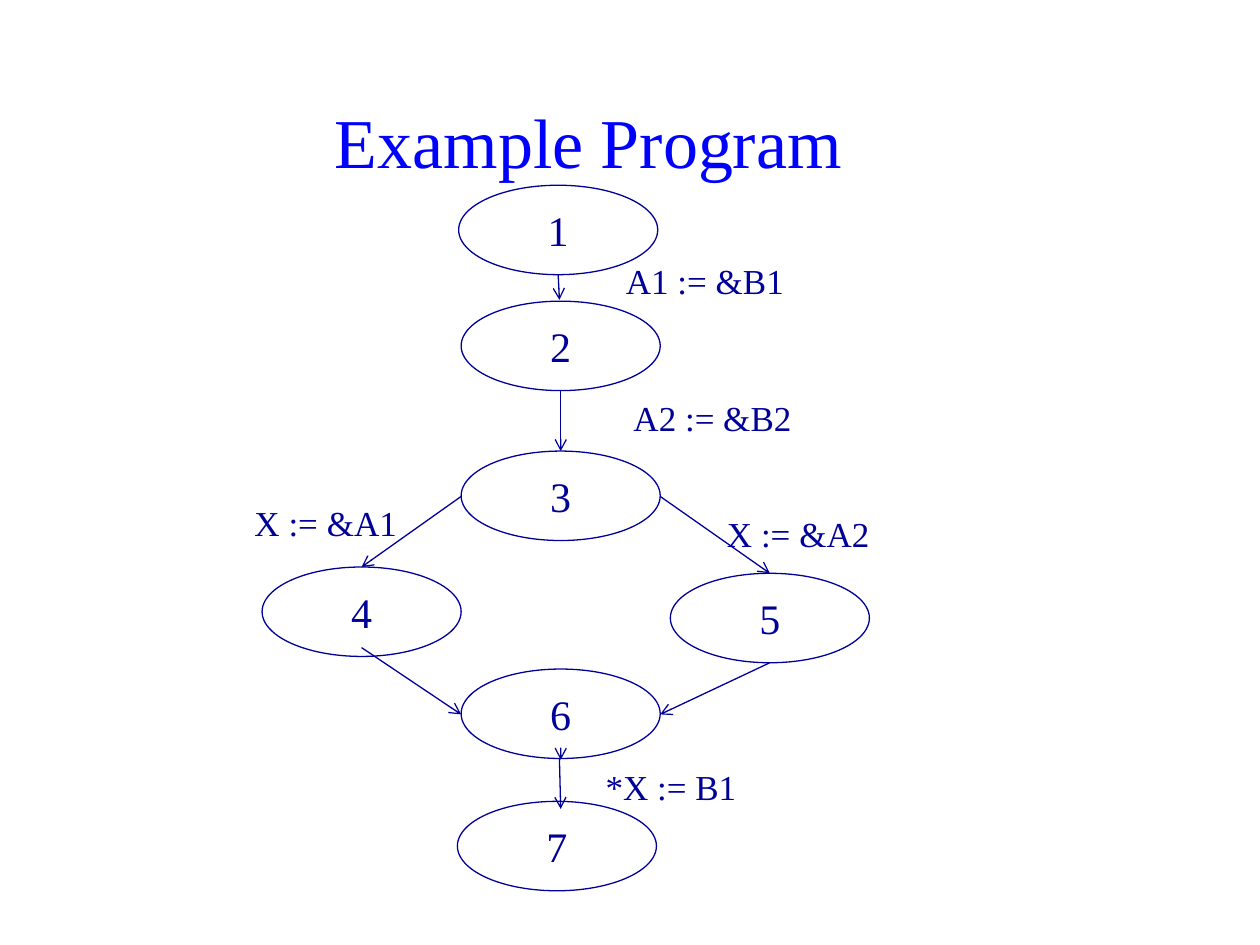
from typing import NamedTuple

from lxml.etree import SubElement
from pptx import Presentation
from pptx.dml.color import RGBColor
from pptx.enum.shapes import MSO_CONNECTOR, MSO_SHAPE
from pptx.enum.text import MSO_ANCHOR, MSO_AUTO_SIZE, PP_ALIGN
from pptx.oxml.ns import qn
from pptx.util import Inches, Pt

NAVY = RGBColor(0x00, 0x00, 0x99)
BLUE = RGBColor(0x00, 0x00, 0xFF)
FONT = "Times New Roman"
NODE_W, NODE_H = 1.58, 0.71
LABEL_W, LABEL_H = 2.09, 0.44


class Item(NamedTuple):
    text: str
    left: float
    top: float


class Arrow(NamedTuple):
    x1: float
    y1: float
    x2: float
    y2: float


NODES = [
    Item("1", 3.64, 1.47),
    Item("2", 3.66, 2.39),
    Item("3", 3.66, 3.58),
    Item("4", 2.08, 4.5),
    Item("5", 5.32, 4.55),
    Item("6", 3.66, 5.31),
    Item("7", 3.63, 6.36),
]
LABELS = [
    Item("A1 := &B1", 4.55, 2.01),
    Item("A2 := &B2", 4.61, 3.1),
    Item("X := &A1", 1.54, 3.93),
    Item("X := &A2", 5.29, 4.02),
    Item("*X := B1", 4.28, 6.03),
]
ARROWS = [
    Arrow(4.43, 2.18, 4.44, 2.38),
    Arrow(4.45, 3.1, 4.45, 3.58),
    Arrow(3.66, 3.94, 2.87, 4.5),
    Arrow(5.24, 3.94, 6.11, 4.55),
    Arrow(2.87, 5.14, 3.66, 5.67),
    Arrow(6.11, 5.26, 5.24, 5.67),
    Arrow(4.45, 6.02, 4.45, 6.03),
    Arrow(4.44, 6.02, 4.45, 6.42),
]


def write(shape, text: str, size: int, color: RGBColor, anchor, fit) -> None:
    frame = shape.text_frame
    frame.text = text
    frame.word_wrap = True
    frame.auto_size = fit
    frame.vertical_anchor = anchor
    line = frame.paragraphs[0]
    line.alignment = PP_ALIGN.CENTER
    font = line.runs[0].font
    font.name, font.size = FONT, Pt(size)
    font.color.rgb = color


def add_title(slide, text: str) -> None:
    title = slide.shapes.title
    title.left, title.top = Inches(0.42), Inches(0.29)
    title.width, title.height = Inches(8.5), Inches(1.21)
    write(title, text, 40, BLUE, MSO_ANCHOR.BOTTOM, MSO_AUTO_SIZE.NONE)


def add_node(slide, node: Item) -> None:
    oval = slide.shapes.add_shape(
        MSO_SHAPE.OVAL, Inches(node.left), Inches(node.top),
        Inches(NODE_W), Inches(NODE_H))
    oval.shadow.inherit = False
    oval.fill.background()
    oval.line.color.rgb = NAVY
    oval.line.width = Pt(0.75)
    write(oval, node.text, 24, NAVY, MSO_ANCHOR.TOP,
          MSO_AUTO_SIZE.SHAPE_TO_FIT_TEXT)


def add_label(slide, label: Item) -> None:
    box = slide.shapes.add_textbox(
        Inches(label.left), Inches(label.top), Inches(LABEL_W), Inches(LABEL_H))
    write(box, label.text, 20, NAVY, MSO_ANCHOR.TOP,
          MSO_AUTO_SIZE.SHAPE_TO_FIT_TEXT)


def add_arrow(slide, arrow: Arrow) -> None:
    link = slide.shapes.add_connector(
        MSO_CONNECTOR.STRAIGHT, *(Inches(value) for value in arrow))
    link.line.color.rgb = NAVY
    link.line.width = Pt(0.75)
    props = link._element.spPr
    SubElement(props.find(qn("a:ln")), qn("a:tailEnd"), type="arrow")
    SubElement(props, qn("a:effectLst"))


def main() -> None:
    deck = Presentation()
    deck.slide_width, deck.slide_height = Inches(10), Inches(7.5)
    slide = deck.slides.add_slide(deck.slide_layouts[5])
    add_title(slide, "Example Program")
    for node in NODES:
        add_node(slide, node)
    for label in LABELS:
        add_label(slide, label)
    for arrow in ARROWS:
        add_arrow(slide, arrow)
    deck.save("out.pptx")


if __name__ == "__main__":
    main()
